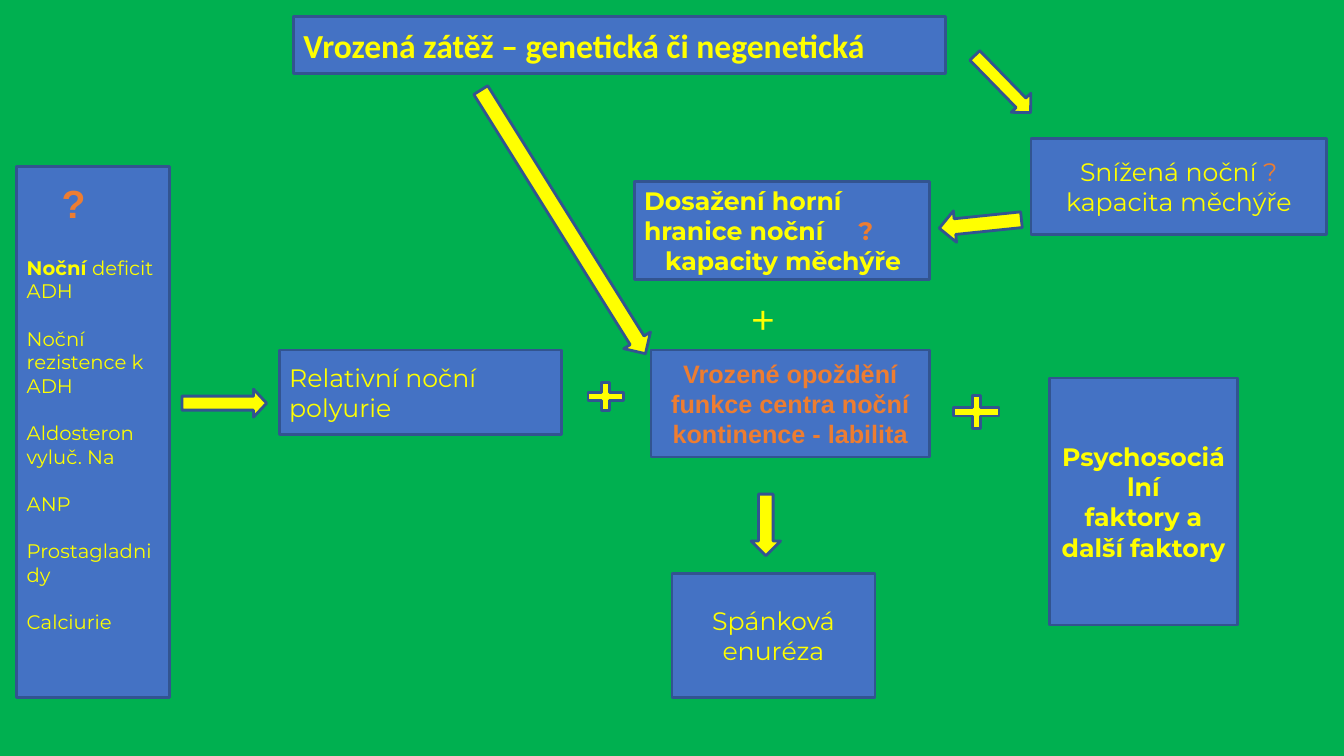
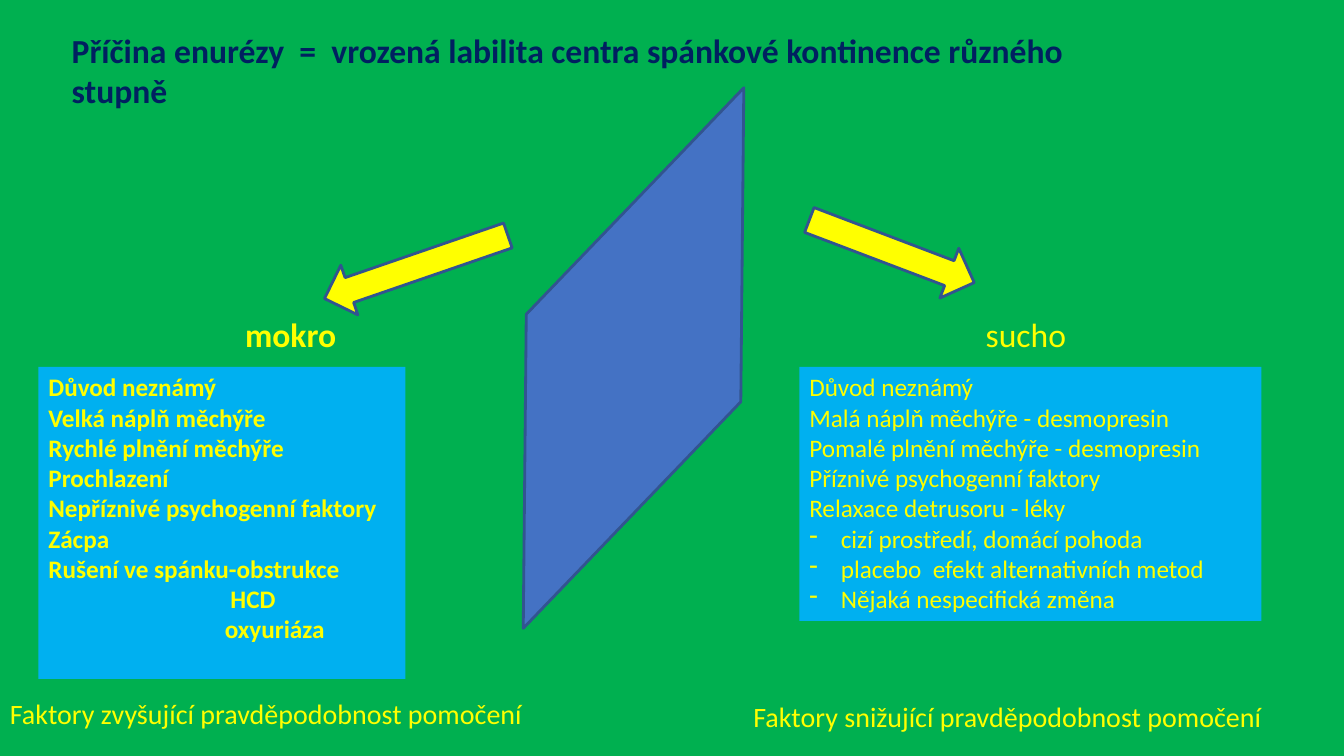
from lxml.etree import SubElement
from pptx import Presentation
from pptx.dml.color import RGBColor
from pptx.enum.shapes import MSO_SHAPE as Shape
from pptx.enum.text import MSO_ANCHOR as Anchor, MSO_AUTO_SIZE as AutoSize, PP_ALIGN as Align
from pptx.oxml.ns import qn
from pptx.util import Pt

# Shared look
COLORS = {"ground": "00B050", "box": "4472C4", "edge": "325490", "panel": "00B0F0",
          "yellow": "FFFF00", "orange": "ED7D31", "navy": "002060"}
HEADING = {"font": "Calibri", "size": 24, "bold": True, "anchor": Anchor.MIDDLE}
BODY = {"font": "Montserrat", "size": 18}
CAUSE_GAP = 17

# Slide 1: frames are left, top, width, height
BURDEN = {"title": "Vrozená zátěž – genetická či negenetická",
          "frame": (209.5, 12, 466, 40.5), "fill": "box", "color": "yellow"}
MARK = ("?", {"color": "orange"})
CAUSES = [
    {"runs": [("?", {"font": "Arial", "size": 28, "bold": True, "color": "orange"})],
     "indent": 25},
    {"runs": [("Noční ", {"bold": True}), "deficit ADH"], "before": 21},
    {"runs": ["Noční rezistence k ADH"], "before": CAUSE_GAP},
    {"runs": ["Aldosteron"], "before": CAUSE_GAP},
    "vyluč. Na",
    {"runs": ["ANP"], "before": CAUSE_GAP},
    {"runs": ["Prostagladnidy"], "before": CAUSE_GAP},
    {"runs": ["Calciurie"], "before": CAUSE_GAP},
]
CENTERED = {**BODY, "align": Align.CENTER}
FACTORS = [
    ((12, 119, 109, 379), CAUSES, {**BODY, "size": 14, "anchor": Anchor.TOP, "inset_top": 9}),
    ((480, 409.5, 145, 88.5), ["Spánková enuréza"], CENTERED),
    ((736.5, 99, 211, 68.5), [{"runs": ["Snížená noční ", MARK, " kapacita měchýře"]}], CENTERED),
    ((199.5, 250, 201.5, 60.5), ["Relativní noční", "polyurie"], BODY),
    ((453, 129.5, 211, 70),
     ["Dosažení horní", {"runs": ["hranice noční\t", MARK], "tab": 153},
      {"runs": ["kapacity měchýře"], "indent": 15}], {**BODY, "bold": True}),
    ((749.5, 270, 134.5, 176.5), ["Psychosociální", "faktory a další faktory"],
     {**CENTERED, "bold": True}),
    ((465, 250, 199, 76.5), ["Vrozené opoždění", "funkce centra noční kontinence - labilita"],
     {**CENTERED, "font": "Arial", "bold": True, "color": "orange"}),
]
PLUS_SIGN = ((515, 204.5, 60, 45.5), ["+"], {**CENTERED, "size": 32})

# Symbols: kind, frame, rotation, adjustments
BURDEN_SYMBOLS = [
    (Shape.DOWN_ARROW, (391, 47.5, 22.5, 222), 328, (0.52, 0.5)),
    (Shape.RIGHT_ARROW, (130, 278, 60.5, 20), 0, (0.5, 0.47)),
    (Shape.DOWN_ARROW, (706.5, 31.5, 19.5, 57), 315.7, (0.5, 0.5)),
    (Shape.DOWN_ARROW, (689, 130.5, 22.5, 59), 84.1, (0.5, 0.5)),
    (Shape.DOWN_ARROW, (536.5, 353, 21, 44), 0, (0.5, 0.5)),
    (Shape.MATH_PLUS, (415.5, 269.5, 34.5, 27.5), 0, (0.21,)),
    (Shape.MATH_PLUS, (675.5, 278, 44, 32.5), 0, (0.18,)),
]

# Slide 2
LABILITY = {"title": "Příčina enurézy  =  vrozená labilita centra spánkové kontinence různého stupně",
            "frame": (44, 17.5, 782.5, 65.5), "fill": None, "color": "navy"}
DIAMOND = (244, 173, 417, 165.5)
LABILITY_SYMBOLS = [
    (Shape.RIGHT_ARROW, (574, 160.5, 126, 38), 20.8, (0.5, 0.5)),
    (Shape.RIGHT_ARROW, (228, 172, 138.5, 37.5), 161, (0.5, 0.5)),
]
WET = ["Důvod neznámý", "Velká náplň měchýře", "Rychlé plnění měchýře", "Prochlazení",
       "Nepříznivé psychogenní faktory", "Zácpa", "Rušení ve spánku-obstrukce",
       {"runs": ["HCD"], "indent": 130}, {"runs": ["oxyuriáza"], "indent": 126}]
DRY = ["Důvod neznámý", "Malá náplň měchýře - desmopresin",
       "Pomalé plnění měchýře - desmopresin", "Příznivé psychogenní faktory",
       "Relaxace detrusoru - léky"]
DRY += [{"runs": [item], "bullet": "-", "indent": 22.5} for item in
        ("cizí prostředí, domácí pohoda", "placebo  efekt alternativních metod",
         "Nějaká nespecifická změna")]
PLAIN = {"font": "Calibri", "size": 18, "anchor": Anchor.TOP}
PANELS = [
    ((571, 262, 330, 181.5), DRY, PLAIN),
    ((27.5, 262, 262, 223), WET, {**PLAIN, "bold": True}),
]
LABELS = [
    ((168, 220.5, 129.5, 36), ["mokro"], {**PLAIN, "size": 24, "bold": True}),
    ((697, 220.5, 115, 36), ["sucho"], {**PLAIN, "size": 24}),
    ((0, 494, 399, 31), ["Faktory zvyšující pravděpodobnost pomočení"], {**PLAIN, "size": 20}),
    ((531, 496, 395, 31), ["Faktory snižující pravděpodobnost pomočení"], {**PLAIN, "size": 20}),
]


def rgb(name):
    return RGBColor.from_string(COLORS[name])


def points(values):
    return [Pt(value) for value in values]


def set_font(font, style):
    if "font" in style:
        font.name = style["font"]
    if "size" in style:
        font.size = Pt(style["size"])
    if "bold" in style:
        font.bold = style["bold"]
    if "color" in style:
        font.color.rgb = rgb(style["color"])


def set_indent(para, item):
    """Left margin, dash bullet and tab stop of one paragraph."""
    props = para._p.get_or_add_pPr()
    indent = Pt(item.get("indent", 0))
    props.set("marL", str(indent))
    if "bullet" in item:
        props.set("indent", str(-indent))
        SubElement(props, qn("a:buChar"), char=item["bullet"])
    if "tab" in item:
        stops = SubElement(props, qn("a:tabLst"))
        SubElement(stops, qn("a:tab"), pos=str(Pt(item["tab"])), algn="l")


def write(shape, items, style):
    frame = shape.text_frame
    frame.word_wrap = True
    frame.auto_size = AutoSize.NONE
    frame.vertical_anchor = style.get("anchor", Anchor.MIDDLE)
    frame.margin_left = frame.margin_right = Pt(7.2)
    frame.margin_top = Pt(style.get("inset_top", 3.6))
    frame.margin_bottom = Pt(3.6)
    for index, item in enumerate(items):
        if isinstance(item, str):
            item = {"runs": [item]}
        para = frame.add_paragraph() if index else frame.paragraphs[0]
        set_indent(para, item)
        para.alignment = style.get("align", Align.LEFT)
        para.space_before = Pt(item.get("before", 0))
        set_font(para.font, {"color": "yellow", **style})
        for run in item["runs"]:
            text, change = (run, {}) if isinstance(run, str) else run
            span = para.add_run()
            span.text = text
            set_font(span.font, change)


def paint(shape, fill, edge="edge"):
    shape.fill.solid()
    shape.fill.fore_color.rgb = rgb(fill)
    if edge:
        shape.line.color.rgb = rgb(edge)
        shape.line.width = Pt(2)
    else:
        shape.line.fill.background()


def add_shape(page, kind, frame, fill, edge="edge", rotation=0, adjustments=()):
    shape = page.shapes.add_shape(kind, *points(frame))
    shape.shadow.inherit = False
    shape.rotation = rotation
    for index, value in enumerate(adjustments):
        shape.adjustments[index] = value
    paint(shape, fill, edge)
    return shape


def add_boxes(page, boxes, fill, edge="edge"):
    for frame, items, style in boxes:
        write(add_shape(page, Shape.RECTANGLE, frame, fill, edge), items, style)


def add_labels(page, labels):
    for frame, items, style in labels:
        write(page.shapes.add_textbox(*points(frame)), items, style)


def add_symbols(page, symbols):
    for kind, frame, rotation, adjustments in symbols:
        add_shape(page, kind, frame, "yellow", "edge", rotation, adjustments)


def add_page(deck, heading):
    page = deck.slides.add_slide(deck.slide_layouts[5])
    title = page.shapes.title
    title.left, title.top, title.width, title.height = points(heading["frame"])
    if heading["fill"]:
        paint(title, heading["fill"])
    write(title, [heading["title"]], {**HEADING, "color": heading["color"]})
    return page


def main():
    deck = Presentation()
    deck.slide_width, deck.slide_height = Pt(960), Pt(540)
    ground = deck.slide_master.background.fill
    ground.solid()
    ground.fore_color.rgb = rgb("ground")

    # Causes of bed-wetting
    page = add_page(deck, BURDEN)
    add_boxes(page, FACTORS, "box")
    add_labels(page, [PLUS_SIGN])
    add_symbols(page, BURDEN_SYMBOLS)

    # Wet or dry night
    page = add_page(deck, LABILITY)
    add_shape(page, Shape.FLOWCHART_DECISION, DIAMOND, "box", rotation=112.2)
    add_symbols(page, LABILITY_SYMBOLS)
    add_boxes(page, PANELS, "panel", edge=None)
    add_labels(page, LABELS)
    deck.save("out.pptx")


if __name__ == "__main__":
    main()
